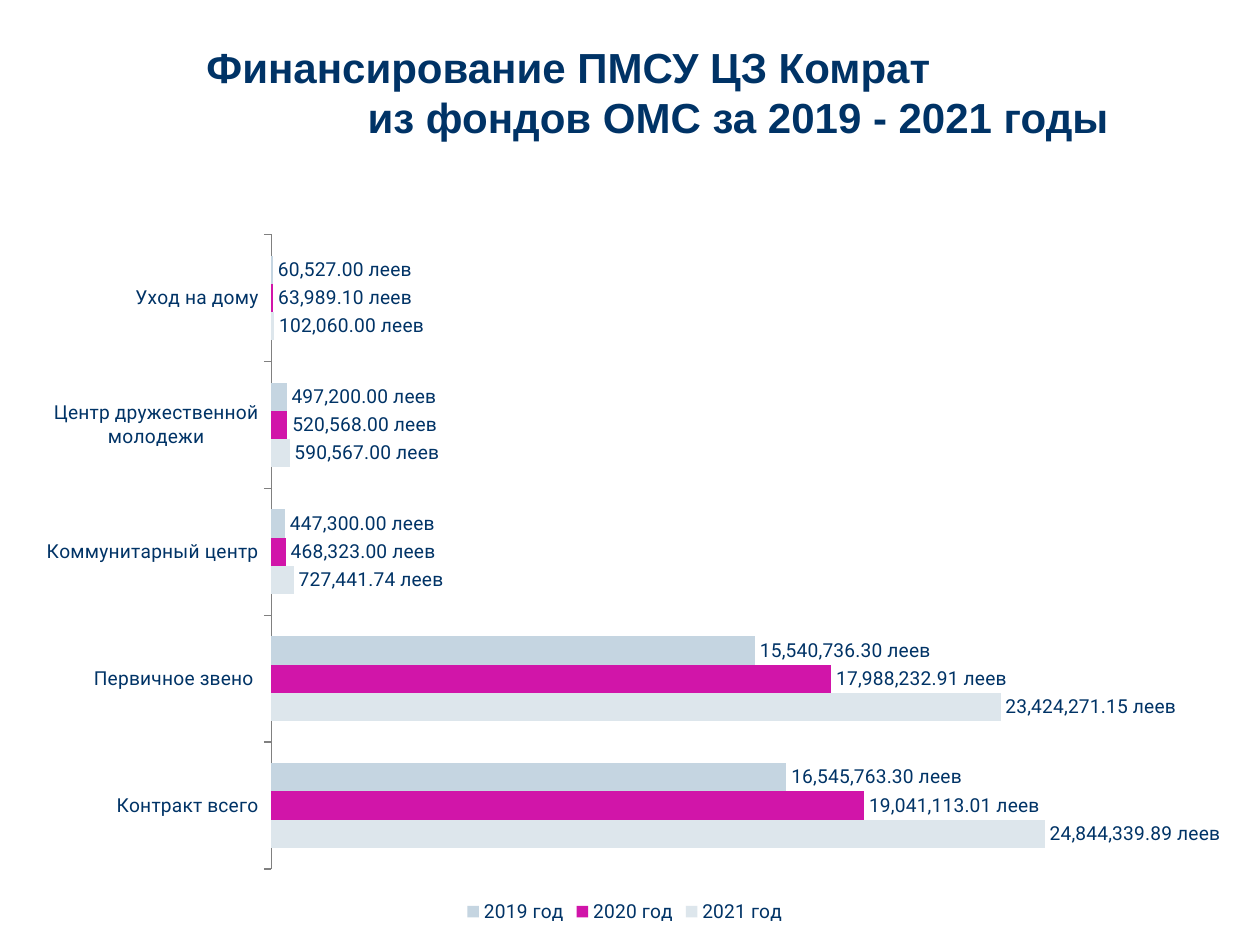
from pptx import Presentation
from pptx.chart.data import CategoryChartData
from pptx.dml.color import RGBColor
from pptx.enum.chart import XL_CHART_TYPE, XL_LABEL_POSITION, XL_LEGEND_POSITION, XL_TICK_LABEL_POSITION, XL_TICK_MARK
from pptx.oxml import parse_xml
from pptx.oxml.ns import nsdecls
from pptx.util import Inches, Pt

NAVY = RGBColor(0x00, 0x33, 0x66)
GRAY = RGBColor(0x80, 0x80, 0x80)
PALE = RGBColor(0xDD, 0xE6, 0xEC)
MAGENTA = RGBColor(0xD1, 0x15, 0xA9)
STEEL = RGBColor(0xC5, 0xD5, 0xE1)

TITLE_LINES = [
    ("Финансирование ПМСУ ЦЗ Комрат", 0),
    ("из фондов ОМС за 2019 - 2021 годы", 1.28),
]
CATEGORIES = [
    "Контракт всего",
    "Первичное звено ",
    "Коммунитарный центр",
    "Центр дружественной молодежи",
    "Уход на дому",
]
SERIES = [
    ("2021 год", PALE, (24844339.89, 23424271.15, 727441.74, 590567, 102060)),
    ("2020 год", MAGENTA, (19041113.01, 17988232.91, 468323, 520568, 63989.1)),
    ("2019 год", STEEL, (16545763.3, 15540736.3, 447300, 497200, 60527)),
]
MONEY_FORMAT = '#,##0.00" леев"'
PLOT_AREA = {"x": 0.2, "y": 0.042, "w": 0.792, "h": 0.876}
TITLE_FONT = {"name": "Arial", "size": Pt(24), "bold": True}
CHART_FONT = {"name": "Roboto", "size": Pt(11), "bold": False}


def set_font(font, values):
    for name, value in values.items():
        setattr(font, name, value)
    font.color.rgb = NAVY


def add_title(page):
    box = page.shapes.add_textbox(Inches(1.54), Inches(0.28), Inches(7.64), Inches(0.91))
    frame = box.text_frame
    frame.word_wrap = True
    for index, (line, indent) in enumerate(TITLE_LINES):
        para = frame.paragraphs[0] if index == 0 else frame.add_paragraph()
        para._p.get_or_add_pPr().set("marL", str(Inches(indent)))
        span = para.add_run()
        span.text = line
        set_font(span.font, TITLE_FONT)


def set_plot_area(chart):
    places = "".join(f'<c:{key} val="{value}"/>' for key, value in PLOT_AREA.items())
    layout = parse_xml(
        f'<c:layout {nsdecls("c")}><c:manualLayout><c:layoutTarget val="inner"/>'
        f'<c:xMode val="edge"/><c:yMode val="edge"/>{places}</c:manualLayout></c:layout>'
    )
    plot_area = chart._chartSpace.chart.plotArea
    for old in plot_area.findall(layout.tag):
        plot_area.remove(old)
    plot_area.insert(0, layout)


def add_funding_chart(page):
    data = CategoryChartData(number_format=MONEY_FORMAT)
    data.categories = CATEGORIES
    for name, _, values in SERIES:
        data.add_series(name, values)
    chart = page.shapes.add_chart(
        XL_CHART_TYPE.BAR_CLUSTERED, Inches(0.28), Inches(1.62), Inches(9.41), Inches(5.75), data
    ).chart
    chart.has_title = False
    set_font(chart.font, CHART_FONT)
    set_plot_area(chart)

    chart.has_legend = True
    chart.legend.position = XL_LEGEND_POSITION.BOTTOM
    chart.legend.include_in_layout = False

    category_axis = chart.category_axis
    category_axis.major_tick_mark = XL_TICK_MARK.OUTSIDE
    category_axis.tick_label_position = XL_TICK_LABEL_POSITION.LOW
    category_axis.format.line.color.rgb = GRAY
    category_axis.format.line.width = Pt(0.75)

    value_axis = chart.value_axis
    value_axis.visible = False
    value_axis.has_major_gridlines = False
    value_axis.minimum_scale = 0
    value_axis.maximum_scale = 30000000

    plot = chart.plots[0]
    plot.gap_width = 150
    plot.overlap = 0
    plot.vary_by_categories = False
    for series, (_, color, _) in zip(plot.series, SERIES):
        series.invert_if_negative = False
        series.format.fill.solid()
        series.format.fill.fore_color.rgb = color
        labels = series.data_labels
        labels.show_value = True
        labels.position = XL_LABEL_POSITION.OUTSIDE_END
        labels.number_format = MONEY_FORMAT
        labels.number_format_is_linked = False
        set_font(labels.font, CHART_FONT)


def main():
    deck = Presentation()
    deck.slide_width = Inches(10)
    deck.slide_height = Inches(7.5)
    page = deck.slides.add_slide(deck.slide_layouts[6])
    add_title(page)
    add_funding_chart(page)
    deck.save("out.pptx")


if __name__ == "__main__":
    main()
